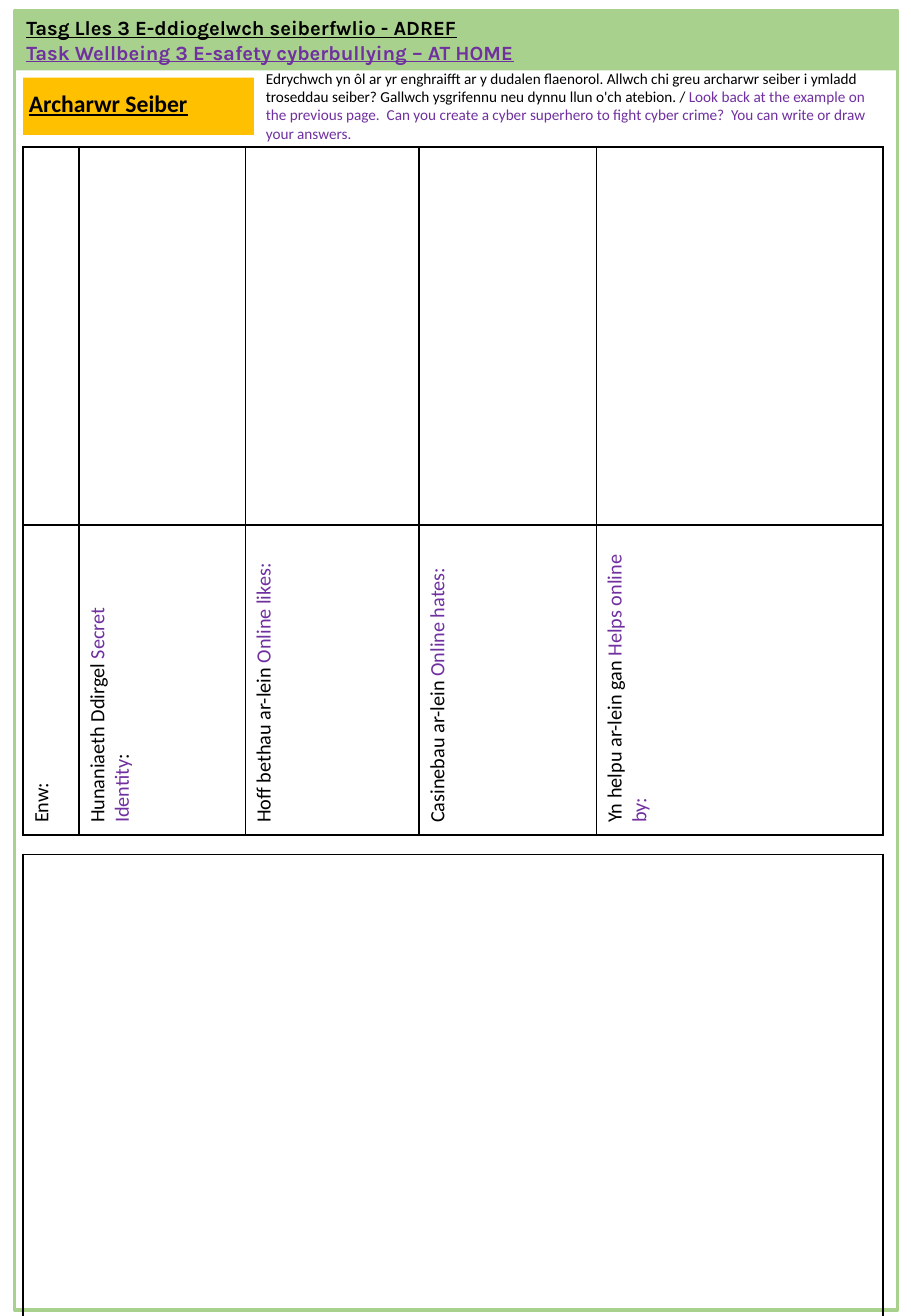
from dataclasses import dataclass
from typing import Optional

import pptx
import pptx.dml.color
import pptx.enum.shapes
import pptx.enum.text
import pptx.oxml
import pptx.oxml.ns
import pptx.util
from pptx.util import Inches

HUES = {
    "green": "A9D18E",
    "gold": "FFC000",
    "black": "000000",
    "purple": "7030A0",
}
COLS = [0.46, 1.37, 1.43, 1.46, 2.36]
ROWS = [3.11, 2.55, 0.16, 4.67]
SIDES = ("L", "R", "T", "B")
HEAD, GAP, DRAW = 1, 2, 3

Run = tuple[str, str]
Line = list[Run]


@dataclass
class Panel:
    left: float
    top: float
    width: float
    height: float
    fill: Optional[str] = None
    line: Optional[str] = None


@dataclass
class Note:
    left: float
    top: float
    width: float
    height: float
    lines: list[Line]
    size: float
    font: str = "Calibri"
    strong: bool = False


BANNER = Panel(0.12, 0.1, 7.27, 0.48, fill="green")
FRAME = Panel(0.12, 0.09, 7.27, 10.69, line="green")
LABEL = Panel(0.19, 0.64, 1.9, 0.47, fill="gold")

TITLE = Note(0.12, 0.08, 5.86, 0.5, [
    [("Tasg Lles 3 E-ddiogelwch seiberfwlio - ADREF", "black")],
    [("Task Wellbeing 3 E-safety cyberbullying – AT HOME", "purple")],
], 12, "Karla", True)
HERO = Note(0.14, 0.68, 2, 0.34, [[("Archarwr Seiber", "black")]], 14, strong=True)
GUIDE = Note(2.09, 0.52, 5.18, 0.71, [[
    ("Edrychwch yn ôl ar yr enghraifft ar y dudalen flaenorol. Allwch chi greu "
     "archarwr seiber i ymladd troseddau seiber? Gallwch ysgrifennu neu dynnu "
     "llun o'ch atebion. / ", "black"),
    ("Look back at the example on the previous page.  Can you create a cyber "
     "superhero to fight cyber crime?  You can write or draw your answers.", "purple"),
]], 9)

HEADS: list[Line] = [
    [("Enw:", "black")],
    [("Hunaniaeth Ddirgel ", "black"), ("Secret Identity", "purple"), (":", "black")],
    [("Hoff bethau ar-lein ", "black"), ("Online likes:", "purple")],
    [("Casinebau ar-lein ", "black"), ("Online hates:", "purple")],
    [("Yn helpu ar-lein gan ", "black"), ("Helps online by:", "purple")],
]


def tint(name: str) -> pptx.dml.color.RGBColor:
    return pptx.dml.color.RGBColor.from_string(HUES[name])


def write(frame, lines: list[Line], *, size: float, font: str = "Calibri",
          strong: bool = False) -> None:
    """Fill a text frame with coloured runs; strong is bold and underlined."""
    for i, line in enumerate(lines):
        para = frame.paragraphs[0] if i == 0 else frame.add_paragraph()
        for text, hue in line:
            run = para.add_run()
            run.text = text
            run.font.name = font
            run.font.size = pptx.util.Pt(size)
            run.font.bold = run.font.underline = strong
            run.font.color.rgb = tint(hue)


def add_panel(slide, panel: Panel) -> None:
    shape = slide.shapes.add_shape(
        pptx.enum.shapes.MSO_SHAPE.RECTANGLE, Inches(panel.left),
        Inches(panel.top), Inches(panel.width), Inches(panel.height))
    shape.shadow.inherit = False
    if panel.fill:
        shape.fill.solid()
        shape.fill.fore_color.rgb = tint(panel.fill)
    else:
        shape.fill.background()
    if panel.line:
        shape.line.color.rgb = tint(panel.line)
        shape.line.width = pptx.util.Pt(2.25)
    else:
        shape.line.fill.background()


def add_note(slide, note: Note) -> None:
    box = slide.shapes.add_textbox(Inches(note.left), Inches(note.top),
                                   Inches(note.width), Inches(note.height))
    box.text_frame.word_wrap = True
    box.text_frame.auto_size = pptx.enum.text.MSO_AUTO_SIZE.SHAPE_TO_FIT_TEXT
    write(box.text_frame, note.lines, size=note.size, font=note.font,
          strong=note.strong)


def edge(cell, sides: tuple[str, ...]) -> None:
    """Draw the named sides in black and clear the others."""
    props = cell._tc.get_or_add_tcPr()
    space = pptx.oxml.ns.nsdecls("a")
    for i, side in enumerate(SIDES):
        paint = "<a:noFill/>"
        if side in sides:
            paint = f'<a:solidFill><a:srgbClr val="{HUES["black"]}"/></a:solidFill>'
        props.insert(i, pptx.oxml.parse_xml(
            f'<a:ln{side} {space} w="12700">{paint}</a:ln{side}>'))


def shrink(cell) -> None:
    """Let an empty cell be as low as its row."""
    cell.margin_top = cell.margin_bottom = 0
    cell.text_frame.paragraphs[0]._p.append(pptx.oxml.parse_xml(
        f'<a:endParaRPr {pptx.oxml.ns.nsdecls("a")} sz="800"/>'))


def add_grid(slide) -> None:
    table = slide.shapes.add_table(
        len(ROWS), len(COLS), Inches(0.19), Inches(1.21),
        Inches(sum(COLS)), Inches(sum(ROWS))).table
    table.first_row = table.horz_banding = False
    for col, width in zip(table.columns, COLS):
        col.width = Inches(width)
    for row, height in zip(table.rows, ROWS):
        row.height = Inches(height)
    for r in range(len(ROWS)):
        for c in range(len(COLS)):
            cell = table.cell(r, c)
            cell.fill.background()
            edge(cell, ("T", "B") if r == GAP else SIDES)
            if r == GAP:
                shrink(cell)
    for c, line in enumerate(HEADS):
        cell = table.cell(HEAD, c)
        cell._tc.get_or_add_tcPr().set("vert", "vert270")
        write(cell.text_frame, [line], size=12)
    for r in (GAP, DRAW):
        table.cell(r, 0).merge(table.cell(r, len(COLS) - 1))


def main() -> None:
    deck = pptx.Presentation()
    deck.slide_width, deck.slide_height = Inches(7.5), Inches(10.83)
    slide = deck.slides.add_slide(deck.slide_layouts[6])
    add_panel(slide, BANNER)
    add_note(slide, TITLE)
    add_panel(slide, FRAME)
    add_panel(slide, LABEL)
    add_note(slide, HERO)
    add_note(slide, GUIDE)
    add_grid(slide)
    deck.save("out.pptx")


if __name__ == "__main__":
    main()
